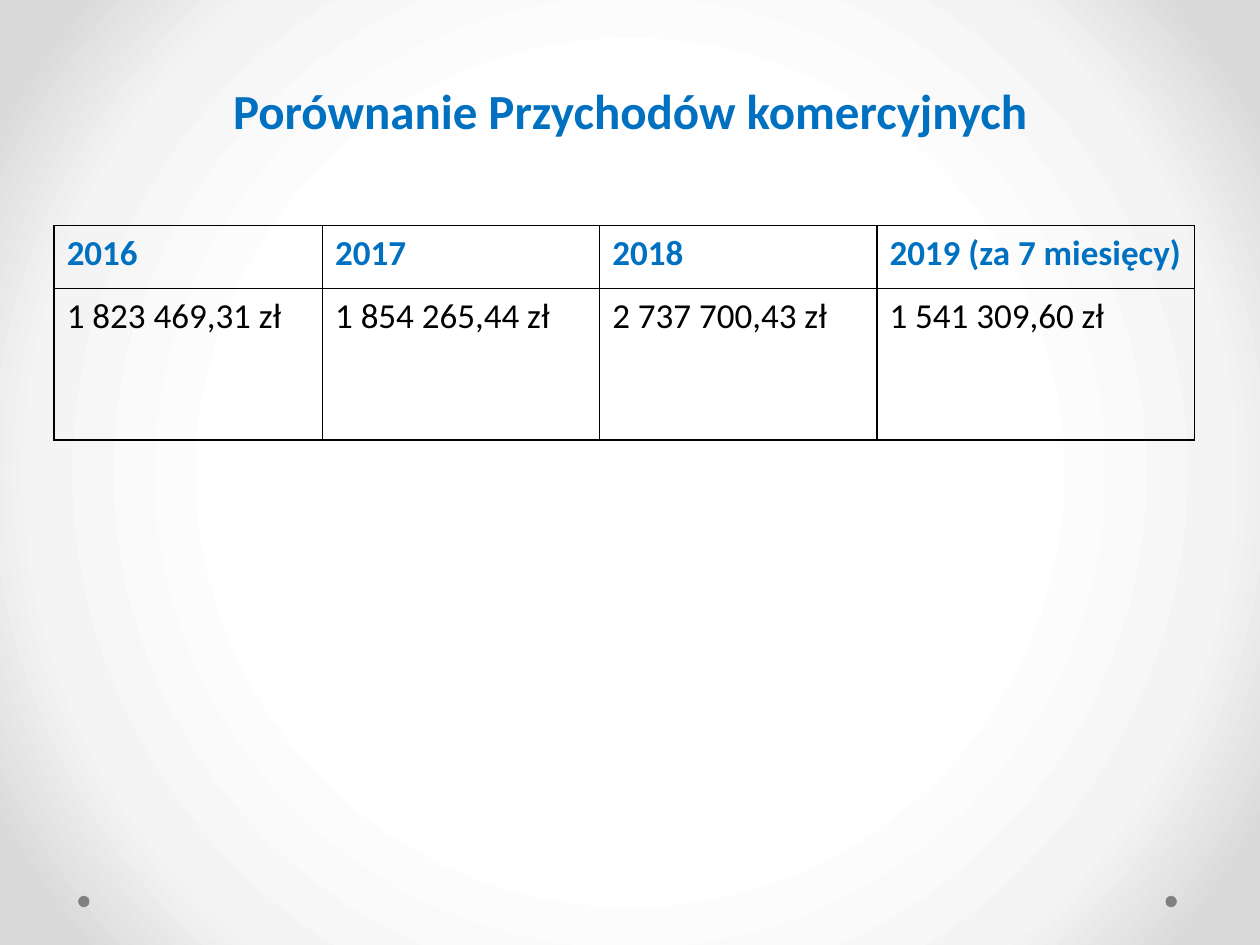
from lxml import etree
from pptx import Presentation
from pptx import util as u
from pptx.dml.color import RGBColor
from pptx.enum import shapes, text
from pptx.oxml import parse_xml
from pptx.oxml.ns import nsdecls, qn

COLORS = {"blue": "0070C0", "black": "000000", "dot": "808080",
          "center": "FFFFFF", "middle": "F4F4F4", "edge": "DADADA"}
REVENUE = {
    "2016": "1 823 469,31 zł",
    "2017": "1 854 265,44 zł",
    "2018": "2 737 700,43 zł",
    "2019 (za 7 miesięcy)": "1 541 309,60 zł",
}


class SlideBuilder:
    font_name = "Calibri"

    def __init__(self, slide):
        self.slide = slide

    def format_font(self, paragraph, size, color, bold):
        font = paragraph.font
        font.name, font.size, font.bold = self.font_name, u.Pt(size), bold
        font.color.rgb = RGBColor.from_string(COLORS[color])

    def radial_background(self, stops):
        """Fill the background from the center outwards; stops are (percent, color)."""
        self.slide.background.fill.solid()
        properties = self.slide.element.find(".//" + qn("p:bgPr"))
        stop_xml = "".join(
            f'<a:gs pos="{percent * 1000}"><a:srgbClr val="{COLORS[color]}"/></a:gs>'
            for percent, color in stops)
        gradient = parse_xml(
            f'<a:gradFill {nsdecls("a")} rotWithShape="1"><a:gsLst>{stop_xml}</a:gsLst>'
            '<a:path path="circle"><a:fillToRect l="50000" t="50000" r="50000" b="50000"/>'
            '</a:path></a:gradFill>')
        properties.replace(properties[0], gradient)

    def dot(self, left, top, size):
        shape = self.slide.shapes.add_shape(
            shapes.MSO_SHAPE.OVAL, *map(u.Inches, (left, top, size, size)))
        shape.shadow.inherit = False
        shape.fill.solid()
        shape.fill.fore_color.rgb = RGBColor.from_string(COLORS["dot"])
        shape.line.fill.background()

    def title(self, wording, left, top, width, height):
        title = self.slide.shapes.title
        title.left, title.top, title.width, title.height = map(
            u.Inches, (left, top, width, height))
        frame = title.text_frame
        frame.text = wording
        frame.vertical_anchor = text.MSO_ANCHOR.MIDDLE
        paragraph = frame.paragraphs[0]
        paragraph.alignment = text.PP_ALIGN.CENTER
        self.format_font(paragraph, 28, "blue", True)

    def cell_borders(self, cell):
        properties = cell._tc.get_or_add_tcPr()
        for position, side in enumerate(("lnL", "lnR", "lnT", "lnB")):
            line = etree.Element(qn(f"a:{side}"), w=str(u.Pt(1)))
            fill = etree.SubElement(line, qn("a:solidFill"))
            etree.SubElement(fill, qn("a:srgbClr"), val=COLORS["black"])
            properties.insert(position, line)

    def table(self, rows, left, top, widths, heights):
        table = self.slide.shapes.add_table(
            len(heights), len(widths),
            *map(u.Inches, (left, top, sum(widths), sum(heights)))).table
        table.first_row = table.horz_banding = False
        for column, width in zip(table.columns, widths):
            column.width = u.Inches(width)
        for row, height, values in zip(table.rows, heights, rows):
            row.height = u.Inches(height)
            header = values is rows[0]
            for cell, value in zip(row.cells, values):
                cell.text = value
                cell.fill.background()
                self.cell_borders(cell)
                self.format_font(cell.text_frame.paragraphs[0], 20,
                                 "blue" if header else "black", header)


def main():
    presentation = Presentation()
    presentation.slide_width, presentation.slide_height = u.Inches(10), u.Inches(7.5)
    builder = SlideBuilder(presentation.slides.add_slide(presentation.slide_layouts[5]))
    builder.radial_background([(50, "center"), (76, "middle"), (92, "edge")])
    for left in (9.25, 0.62):
        builder.dot(left, 7.11, 0.09)
    builder.title("Porównanie Przychodów komercyjnych", 0.5, 0, 9, 1.75)
    builder.table([list(REVENUE.keys()), list(REVENUE.values())], 0.43, 1.79,
                  widths=[2.13, 2.2, 2.2, 2.52], heights=[0.5, 1.2])
    presentation.save("out.pptx")


if __name__ == "__main__":
    main()
